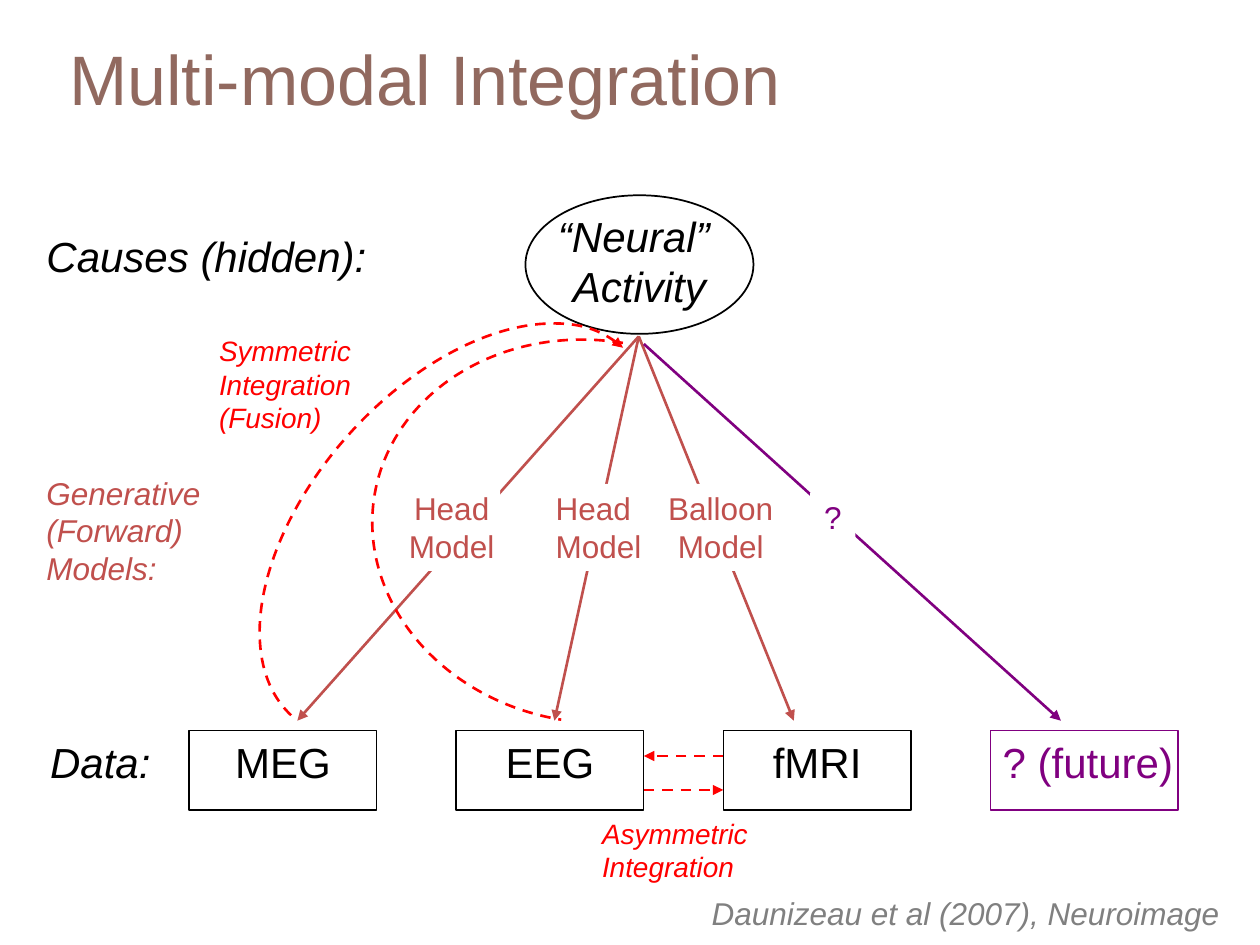
from dataclasses import dataclass

from lxml.etree import SubElement
from pptx import Presentation
from pptx.dml.color import RGBColor
from pptx.enum.dml import MSO_LINE_DASH_STYLE as Dash
from pptx.enum.shapes import MSO_CONNECTOR as Connector, MSO_SHAPE as Shape
from pptx.enum.text import MSO_ANCHOR as Anchor, MSO_AUTO_SIZE as AutoSize, PP_ALIGN as Align
from pptx.oxml.ns import qn
from pptx.util import Inches, Pt

COLORS = {
    "black": "000000",
    "white": "FFFFFF",
    "model": "C0504D",
    "future": "800080",
    "integration": "FF0000",
    "citation": "808080",
    "title": "91695F",
}
FONT = "Arial"
DATA_LEFT, DATA_TOP, DATA_STEP = 1.5, 5.8, 2.12
DATA_WIDTH, DATA_HEIGHT = 1.49, 0.63
ARROW_END = 5.72


@dataclass
class Label:
    lines: tuple[str, ...]
    area: tuple[float, float, float, float]
    size: int
    color: str
    italic: bool = True
    aligns: tuple = (Align.LEFT,)
    wrap: bool = True
    inset: tuple[float, float] = (0.1, 0.05)


@dataclass
class Arrow:
    start: tuple[float, float]
    end: tuple[float, float]
    color: str
    dashed: bool = False


@dataclass
class Arc:
    area: tuple[float, float, float, float]
    rotation: float
    bend: float
    arrowhead: bool


def rgb(name: str) -> RGBColor:
    return RGBColor.from_string(COLORS[name])


def write_text(box, label: Label) -> None:
    frame = box.text_frame
    frame.auto_size = AutoSize.NONE
    frame.word_wrap = label.wrap
    frame.vertical_anchor = Anchor.TOP
    frame.margin_left = frame.margin_right = Inches(label.inset[0])
    frame.margin_top = frame.margin_bottom = Inches(label.inset[1])
    for index, line in enumerate(label.lines):
        para = frame.paragraphs[0] if index == 0 else frame.add_paragraph()
        para.alignment = label.aligns[min(index, len(label.aligns) - 1)]
        span = para.add_run()
        span.text = line
        span.font.name = FONT
        span.font.size = Pt(label.size)
        span.font.italic = label.italic
        span.font.color.rgb = rgb(label.color)


def add_label(page, label: Label) -> None:
    write_text(page.shapes.add_textbox(*map(Inches, label.area)), label)


def add_outline(page, kind, area, color: str, width: float):
    box = page.shapes.add_shape(kind, *map(Inches, area))
    box.shadow.inherit = False
    box.fill.background()
    box.line.color.rgb = rgb(color)
    box.line.width = Pt(width)
    return box


def add_model_label(page, label: Label) -> None:
    box = page.shapes.add_shape(Shape.RECTANGLE, *map(Inches, label.area))
    box.shadow.inherit = False
    box.fill.solid()
    box.fill.fore_color.rgb = rgb("white")
    box.line.fill.background()
    write_text(box, label)


def add_arrowhead(shape, end: str) -> None:
    line = shape.element.spPr.find(qn("a:ln"))
    SubElement(line, qn(f"a:{end}"), type="triangle")


def add_arrow(page, arrow: Arrow) -> None:
    points = map(Inches, (*arrow.start, *arrow.end))
    line = page.shapes.add_connector(Connector.STRAIGHT, *points)
    line.line.color.rgb = rgb(arrow.color)
    line.line.width = Pt(1.5)
    if arrow.dashed:
        line.line.dash_style = Dash.DASH
    add_arrowhead(line, "tailEnd")
    SubElement(line.element.spPr, qn("a:effectLst"))


def add_arc(page, arc: Arc) -> None:
    curve = add_outline(page, Shape.LEFT_BRACKET, arc.area, "integration", 1.5)
    curve.adjustments[0] = arc.bend
    curve.rotation = arc.rotation
    curve.element.spPr.find(qn("a:xfrm")).set("flipH", "1")
    curve.line.dash_style = Dash.DASH
    if arc.arrowhead:
        add_arrowhead(curve, "headEnd")


def model_label(lines, area, color="model", align=Align.CENTER) -> Label:
    return Label(lines, area, 18, color, False, (align,), False, (0.04, 0.04))


TITLE = Label(("Multi-modal Integration",), (0.45, 0.21, 6.12, 0.63), 40, "title",
              italic=False, inset=(0.1, 0.07))
DATA = (
    ("MEG", "black", Align.CENTER),
    ("EEG", "black", Align.CENTER),
    ("fMRI", "black", Align.CENTER),
    ("? (future)", "future", Align.LEFT),
)
NEURAL_BOTTOM = (5.07, 2.67)
ARROWS = (
    *(Arrow(NEURAL_BOTTOM, (x, ARROW_END), "model") for x in (2.36, 4.4, 6.3)),
    Arrow((5.11, 2.73), (8.42, ARROW_END), "future"),
    Arrow((5.74, 6), (5.11, 6), "integration", True),
    Arrow((5.11, 6.27), (5.74, 6.27), "integration", True),
)
MODEL_LABELS = (
    model_label(("Head", "Model"), (3.2, 3.84, 0.77, 0.69)),
    model_label(("Head", "Model"), (4.37, 3.84, 0.76, 0.69), align=Align.LEFT),
    model_label(("Balloon", "Model"), (5.26, 3.84, 0.92, 0.69)),
    model_label(("?",), (6.43, 3.91, 0.36, 0.38), "future"),
)
LABELS = (
    Label(("Causes (hidden):",), (0.27, 1.78, 3.11, 0.5), 24, "black"),
    Label(("“Neural”", "Activity"), (4.33, 1.62, 1.49, 1.02), 24, "black",
          aligns=(Align.LEFT, Align.CENTER)),
    Label(("Symmetric", "Integration", "(Fusion)"), (1.64, 2.6, 1.86, 0.9), 16, "integration"),
    Label(("Generative", "(Forward)", "Models:"), (0.27, 3.71, 2.65, 1.01), 18, "model"),
    Label(("Data:",), (0.3, 5.8, 1, 0.5), 24, "black", wrap=False),
    Label(("Asymmetric", "Integration"), (4.68, 6.43, 1.5, 0.64), 16, "integration"),
    Label(("Daunizeau et al (2007), Neuroimage",), (5.55, 7.05, 4.45, 0.4), 18, "citation"),
)
ARCS = (
    Arc((2.62, 1.87, 1.16, 3.93), 221.9, 1.69, True),
    Arc((2.96, 2.56, 1.75, 3.03), 189.3, 1.35, False),
)


def main() -> None:
    deck = Presentation()
    deck.slide_width, deck.slide_height = Inches(10), Inches(7.5)
    page = deck.slides.add_slide(deck.slide_layouts[5])

    title = page.shapes.title
    title.left, title.top, title.width, title.height = map(Inches, TITLE.area)
    write_text(title, TITLE)

    for index, (name, color, align) in enumerate(DATA):
        area = (DATA_LEFT + index * DATA_STEP, DATA_TOP, DATA_WIDTH, DATA_HEIGHT)
        box = add_outline(page, Shape.RECTANGLE, area, color, 0.75)
        write_text(box, Label((name,), area, 24, color, False, (align,), False))
    for arrow in ARROWS:
        add_arrow(page, arrow)
    for label in MODEL_LABELS:
        add_model_label(page, label)
    for label in LABELS:
        add_label(page, label)
    add_outline(page, Shape.OVAL, (4.17, 1.55, 1.81, 1.1), "black", 1)
    for arc in ARCS:
        add_arc(page, arc)

    deck.save("out.pptx")


if __name__ == "__main__":
    main()
